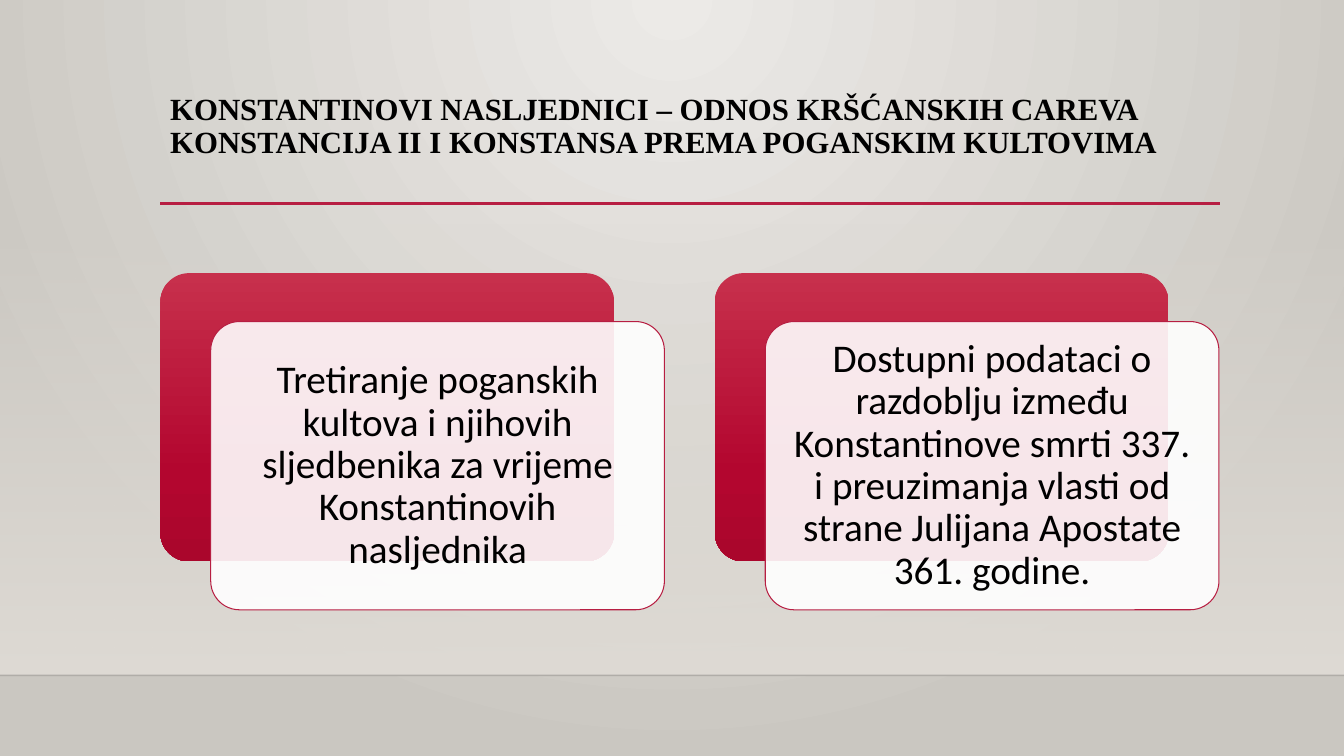
from dataclasses import dataclass

from lxml.etree import SubElement
from pptx import Presentation
from pptx.dml.color import RGBColor
from pptx.enum.shapes import MSO_CONNECTOR, MSO_SHAPE
from pptx.enum.text import MSO_ANCHOR, PP_ALIGN
from pptx.oxml.ns import qn
from pptx.util import Inches, Pt


@dataclass(frozen=True)
class Theme:
    """Colours, fonts and type sizes of the slide."""
    accent: str = "B71E42"
    ink: str = "000000"
    paper: str = "FFFFFF"
    background: tuple = ((0, "ECEAE7", 100), (100, "CAC7C1", 100))
    wall: tuple = ((0, "DFDBD5", 0), (100, "DFDBD5", 100))
    panel: tuple = ((0, "C7304C", 100), (69, "B3062F", 100), (100, "AA062C", 100))
    title_font: str = "Times New Roman"
    body_font: str = "Calibri"
    title_size: int = 22
    body_size: int = 28


THEME = Theme()
TITLE = ("KONSTANTINOVI NASLJEDNICI – ODNOS KRŠĆANSKIH CAREVA "
         "KONSTANCIJA II I KONSTANSA PREMA POGANSKIM KULTOVIMA")
TOPICS = (
    "Tretiranje poganskih kultova i njihovih sljedbenika za vrijeme "
    "Konstantinovih nasljednika",
    "Dostupni podataci o razdoblju između Konstantinove smrti 337. "
    "i preuzimanja vlasti od strane Julijana Apostate 361. godine.",
)


def set_alpha(parent, percent):
    """Set the opacity of the first colour below an element."""
    color = next(parent.iter(qn("a:srgbClr")))
    SubElement(color, qn("a:alpha"), val=str(percent * 1000))


def set_gradient(fill, owner, stops, circular=False):
    """Fill with gradient stops, running downwards or out from the top centre."""
    fill.gradient()
    gradient = next(owner.iter(qn("a:gradFill")))
    for child in list(gradient):
        gradient.remove(child)
    stop_list = SubElement(gradient, qn("a:gsLst"))
    for position, color, opacity in stops:
        stop = SubElement(stop_list, qn("a:gs"), pos=str(position * 1000))
        SubElement(stop, qn("a:srgbClr"), val=color)
        if opacity < 100:
            set_alpha(stop, opacity)
    if circular:
        circle = SubElement(gradient, qn("a:path"), path="circle")
        SubElement(circle, qn("a:fillToRect"), l="43000", t="0", r="43000", b="100000")
    else:
        SubElement(gradient, qn("a:lin"), ang="5400000", scaled="0")


def add_block(slide, kind, left, top, width, height):
    """Add a preset shape without shadow or outline."""
    shape = slide.shapes.add_shape(
        kind, Inches(left), Inches(top), Inches(width), Inches(height))
    shape.shadow.inherit = False
    shape.line.fill.background()
    if kind == MSO_SHAPE.ROUNDED_RECTANGLE:
        shape.adjustments[0] = 0.1
    return shape


def add_rule(slide, left, right, top, color, weight, opacity=100):
    """Add a horizontal line."""
    rule = slide.shapes.add_connector(
        MSO_CONNECTOR.STRAIGHT, Inches(left), Inches(top), Inches(right), Inches(top))
    rule.line.color.rgb = RGBColor.from_string(color)
    rule.line.width = Pt(weight)
    if opacity < 100:
        set_alpha(rule.element.spPr, opacity)
    SubElement(rule.element.spPr, qn("a:effectLst"))


def write_text(shape, text, font, size, alignment, bold=False):
    """Write one wrapped paragraph into a shape."""
    shape.text_frame.word_wrap = True
    paragraph = shape.text_frame.paragraphs[0]
    paragraph.alignment = alignment
    paragraph.line_spacing = 0.9
    run = paragraph.add_run()
    run.text = text
    run.font.name = font
    run.font.size = Pt(size)
    run.font.bold = bold
    run.font.color.rgb = RGBColor.from_string(THEME.ink)


def add_title(slide, text):
    """Add the heading at the top of the slide."""
    box = slide.shapes.add_textbox(Inches(1.59), Inches(0.88), Inches(10.5), Inches(1.15))
    box.text_frame.vertical_anchor = MSO_ANCHOR.TOP
    write_text(box, text, THEME.title_font, THEME.title_size, PP_ALIGN.LEFT, bold=True)


def add_topic(slide, left, top, text):
    """Add a red panel with a translucent text card offset over it."""
    width, height = 4.5, 2.86
    panel = add_block(slide, MSO_SHAPE.ROUNDED_RECTANGLE, left, top, width, height)
    set_gradient(panel.fill, panel.element.spPr, THEME.panel)

    card = add_block(
        slide, MSO_SHAPE.ROUNDED_RECTANGLE, left + 0.5, top + 0.48, width, height)
    card.fill.solid()
    card.fill.fore_color.rgb = RGBColor.from_string(THEME.paper)
    set_alpha(card.element.spPr, 90)
    card.line.color.rgb = RGBColor.from_string(THEME.accent)
    card.line.width = Pt(0.75)

    frame = card.text_frame
    frame.vertical_anchor = MSO_ANCHOR.MIDDLE
    frame.margin_left = frame.margin_right = Inches(0.12)
    frame.margin_top = frame.margin_bottom = Inches(0.12)
    write_text(card, text, THEME.body_font, THEME.body_size, PP_ALIGN.CENTER)


def main():
    """Build and save the slide."""
    presentation = Presentation()
    presentation.slide_width = Inches(13.33)
    presentation.slide_height = Inches(7.5)
    slide = presentation.slides.add_slide(presentation.slide_layouts[6])
    set_gradient(slide.background.fill, slide.element, THEME.background, circular=True)

    wall = add_block(slide, MSO_SHAPE.RECTANGLE, 0, 2.21, 13.33, 4.49)
    set_gradient(wall.fill, wall.element.spPr, THEME.wall)
    add_rule(slide, 0, 13.33, 6.7, THEME.ink, 1, opacity=20)
    add_rule(slide, 1.59, 12.1, 2.02, THEME.accent, 2.5)

    add_title(slide, TITLE)
    for index, text in enumerate(TOPICS):
        add_topic(slide, 1.59 + index * 5.5, 2.71, text)
    presentation.save("out.pptx")


if __name__ == "__main__":
    main()
